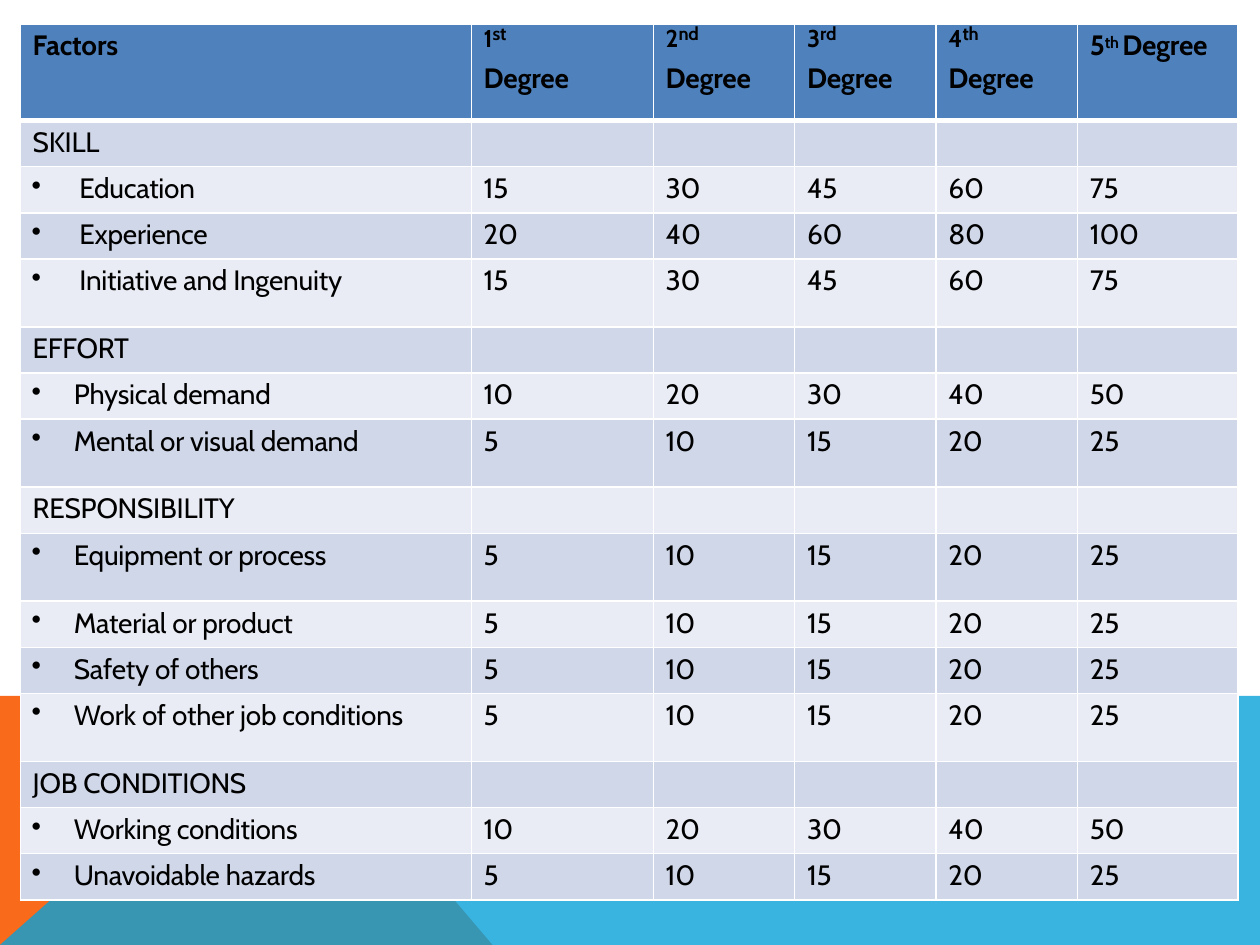
from lxml.etree import SubElement
from pptx import Presentation
from pptx.dml.color import RGBColor
from pptx.oxml import parse_xml
from pptx.oxml.ns import nsdecls, qn
from pptx.util import Cm, Pt

COLUMN_WIDTHS = [9.09, 3.67, 2.85, 2.85, 2.85, 3.24]
HEADER_HEIGHT, ROW_HEIGHT, TALL_HEIGHT = 1.95, 0.93, 1.37
HEADER_FILL, BAND_FILLS = "4F81BC", ["E9ECF4", "D0D7E8"]
ORDINALS = ["st", "nd", "rd", "th", "th"]

# Group, left indent of its factors, and (factor, points per degree, tall row)
GROUPS = [
    ("SKILL", 1.19, [("Education", 15, False), ("Experience", 20, False),
                     ("Initiative and Ingenuity", 15, True)]),
    ("EFFORT", 1.08, [("Physical demand", 10, False),
                      ("Mental or visual demand", 5, True)]),
    ("RESPONSIBILITY", 1.08, [("Equipment or process", 5, True),
                              ("Material or product", 5, False),
                              ("Safety of others", 5, False),
                              ("Work of other job conditions", 5, True)]),
    ("JOB CONDITIONS", 1.08, [("Working conditions", 10, False),
                              ("Unavoidable hazards", 5, False)]),
]


def color(value):
    return RGBColor.from_string(value)


def apply(target, **values):
    for name, value in values.items():
        setattr(target, name, value)


def add_span(para, text, size=16, bold=False, baseline=0):
    span = para.add_run()
    span.text = text
    apply(span.font, name="Cabin", size=Pt(size), bold=bold)
    span.font.color.rgb = color("000000")
    properties = span.font._element
    properties.set("spc", "-10")
    if baseline:
        properties.set("baseline", str(baseline * 1000))


def format_para(para, before=2.6, left=0.25, hanging=0.0, line=None):
    para.space_before = Pt(before)
    if line:
        para.line_spacing = Pt(line)
    properties = para._p.get_or_add_pPr()
    properties.set("marL", str(Cm(left)))
    properties.set("indent", str(-Cm(hanging)))
    if hanging:
        SubElement(properties, qn("a:buChar")).set("char", "•")


def format_cell(cell, fill, top=0.1, top_border=1, bottom_border=1):
    apply(cell, margin_left=0, margin_right=0, margin_top=Cm(top), margin_bottom=0)
    cell.fill.solid()
    cell.fill.fore_color.rgb = color(fill)
    borders = {"L": 1, "R": 1, "T": top_border, "B": bottom_border}
    for position, (side, width) in enumerate(borders.items()):
        border = parse_xml(
            f'<a:ln{side} {nsdecls("a")} w="{Pt(width)}"><a:solidFill>'
            f'<a:srgbClr val="FFFFFF"/></a:solidFill></a:ln{side}>')
        cell._tc.get_or_add_tcPr().insert(position, border)


def write_cell(cell, text, **layout):
    para = cell.text_frame.paragraphs[0]
    format_para(para, **layout)
    add_span(para, text)


def add_panel(page, points, fill, opacity=100):
    start, *others = [(Cm(x), Cm(y)) for x, y in points]
    builder = page.shapes.build_freeform(*start, scale=1.0)
    builder.add_line_segments(others, close=True)
    panel = builder.convert_to_shape()
    panel.shadow.inherit = False
    panel.fill.solid()
    panel.fill.fore_color.rgb = color(fill)
    panel.line.fill.background()
    if opacity < 100:
        swatch = panel._element.spPr.find(qn("a:solidFill"))[0]
        SubElement(swatch, qn("a:alpha")).set("val", str(opacity * 1000))


def add_footer_band(page, left, top, width, height):
    right, bottom, peak = left + width, top + height, left + 5.66
    add_panel(page, [(left, top), (peak, top), (left + 9.93, bottom), (left, bottom)],
              "F96A1B")
    add_panel(page, [(left, bottom), (peak, top), (right, top), (right, bottom)],
              "08A1D9", opacity=80)


def fill_header(cells):
    for degree, cell in enumerate(cells):
        stacked = 1 <= degree <= 4
        format_cell(cell, HEADER_FILL, top=0 if stacked else 0.1, bottom_border=3)
        para = cell.text_frame.paragraphs[0]
        if stacked:
            # Ordinal above, the word below
            format_para(para, before=0, line=17)
            add_span(para, str(degree), 24, True, -17)
            add_span(para, ORDINALS[degree - 1], 10.5, True)
            para = cell.text_frame.add_paragraph()
            format_para(para, before=4.8)
            add_span(para, "Degree", bold=True)
            continue
        format_para(para)
        if degree == 0:
            add_span(para, "Factors", bold=True)
        else:
            add_span(para, str(degree), bold=True)
            add_span(para, ORDINALS[degree - 1] + " ", 15.8, True, 26)
            add_span(para, "Degree", bold=True)


def add_points_table(page, left, top):
    # One row for each group title and each factor
    rows = []
    for group, indent, factors in GROUPS:
        rows.append((group, None, ROW_HEIGHT, {}))
        for factor, points, tall in factors:
            layout = {"left": indent, "hanging": indent - 0.23}
            rows.append((factor, points, TALL_HEIGHT if tall else ROW_HEIGHT, layout))
    heights = [HEADER_HEIGHT] + [row[2] for row in rows]

    frame = page.shapes.add_table(len(heights), len(COLUMN_WIDTHS), Cm(left), Cm(top),
                                  Cm(sum(COLUMN_WIDTHS)), Cm(sum(heights)))
    table = frame.table
    table.horz_banding = False
    for column, width in zip(table.columns, COLUMN_WIDTHS):
        column.width = Cm(width)
    for row, height in zip(table.rows, heights):
        row.height = Cm(height)

    fill_header(table.rows[0].cells)
    for number, (label, points, _, layout) in enumerate(rows, start=1):
        for degree, cell in enumerate(table.rows[number].cells):
            format_cell(cell, BAND_FILLS[number % 2], top_border=3 if number == 1 else 1)
            if degree == 0:
                write_cell(cell, label, **layout)
            elif points:
                write_cell(cell, str(points * degree))


def main():
    deck = Presentation()
    apply(deck, slide_width=Cm(25.4), slide_height=Cm(19.05))
    page = deck.slides.add_slide(deck.slide_layouts[6])
    add_footer_band(page, 0, 14.03, 25.4, 5.02)
    add_points_table(page, 0.41, 0.48)
    deck.save("out.pptx")


if __name__ == "__main__":
    main()
